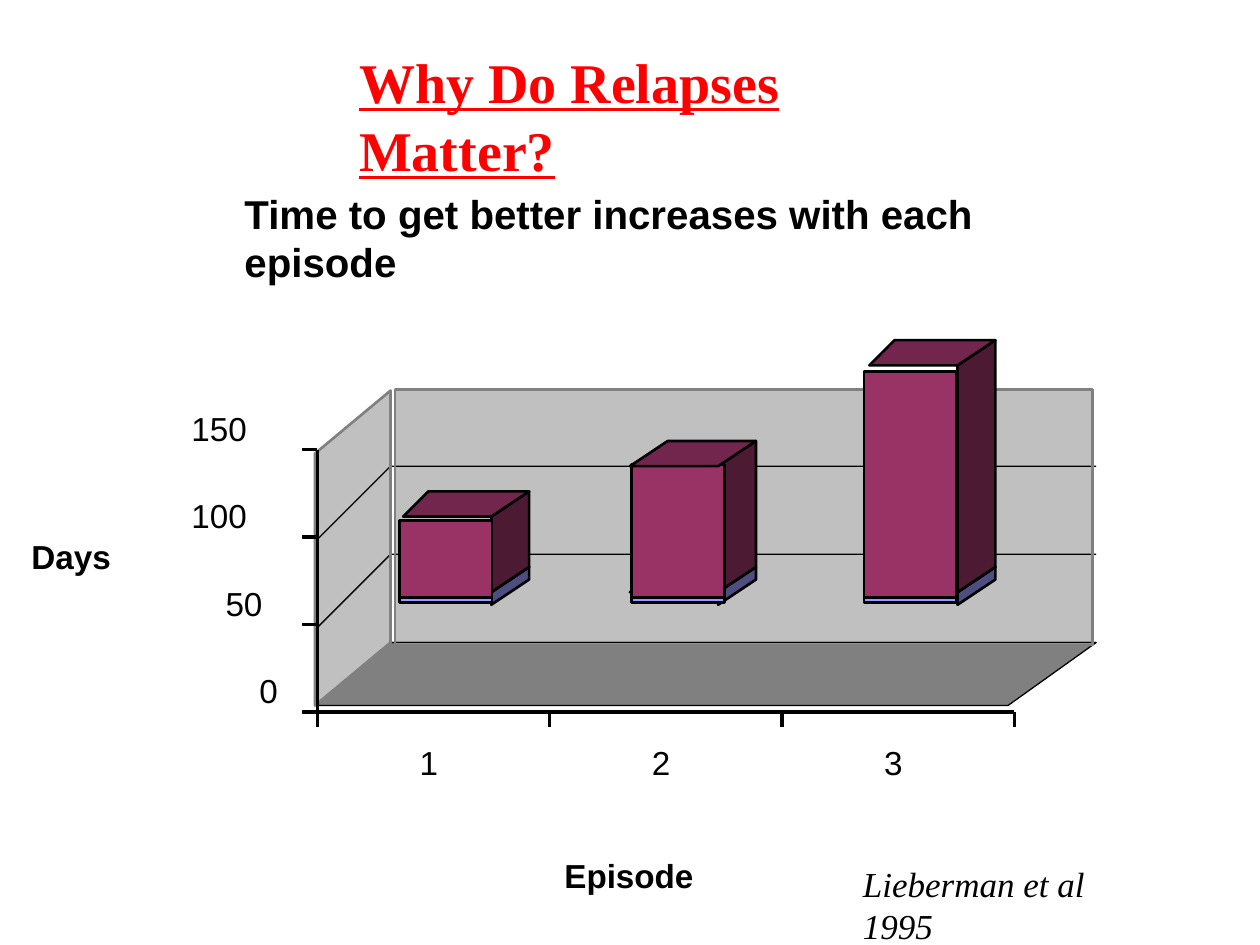
from dataclasses import dataclass

from lxml import etree
from pptx import Presentation
from pptx import util as u
from pptx.dml.color import RGBColor
from pptx.enum import shapes, text
from pptx.oxml.ns import qn

COLUMNS, ROWS = 100, 75
CELL = u.Inches(0.1)

BLACK = RGBColor(0x00, 0x00, 0x00)
RED = RGBColor(0xFF, 0x00, 0x00)
WALL = RGBColor(0xC0, 0xC0, 0xC0)
FLOOR = RGBColor(0x80, 0x80, 0x80)
LILAC = RGBColor(0x99, 0x99, 0xFF)
LILAC_SIDE = RGBColor(0x4D, 0x4D, 0x80)
LILAC_LID = RGBColor(0x73, 0x73, 0xBF)
PLUM = RGBColor(0x99, 0x33, 0x66)
PLUM_SIDE = RGBColor(0x4D, 0x1A, 0x33)
PLUM_LID = RGBColor(0x73, 0x26, 0x4D)

# Lengths are columns and rows of the page grid.
LEFT, RIGHT, BASE, TOP = 25.2, 80.5, 56.5, 35.7
BACK_LEFT, BACK_RIGHT, BACK_BASE, BACK_TOP = 31.35, 86.7, 51.2, 30.9
ROWS_PER_DAY = 6.94 / 50
SLOT = (RIGHT - LEFT) / 3
TICK = 1.2
BAR_LEFT, BAR_BASE, BAR_WIDTH = 31.7, 47.8, 7.35
BAR_DEPTH, BAR_RISE = 2.67, 2.04
HAIRLINE, THICK = 0, 1.5

Point = tuple[float, float]


@dataclass(frozen=True)
class Block:
    left: float
    bottom: float
    height: float
    front: RGBColor
    side: RGBColor
    lid: RGBColor


@dataclass(frozen=True)
class DayMark:
    days: int
    label_left: float


DAY_MARKS = [DayMark(0, 20.6), DayMark(50, 17.9), DayMark(100, 15.2), DayMark(150, 15.2)]
DAYS_BY_EPISODE = {1: 44, 2: 76, 3: 129}


def cells(count: float) -> int:
    return round(count * CELL)


def style(shape, fill: RGBColor | None, line: RGBColor | None, width: float) -> None:
    shape.shadow.inherit = False
    if fill is None:
        shape.fill.background()
    else:
        shape.fill.solid()
        shape.fill.fore_color.rgb = fill
    if line is None:
        shape.line.fill.background()
    else:
        shape.line.color.rgb = line
        shape.line.width = u.Pt(width)


def outline(page, points: list[Point], fill=None, line=None, width=HAIRLINE, close=True) -> None:
    builder = page.shapes.build_freeform(*points[0], scale=CELL)
    builder.add_line_segments(points[1:], close=close)
    style(builder.convert_to_shape(), fill, line, width)


def rectangle(page, left, top, right, bottom, fill=None, line=None, width=HAIRLINE) -> None:
    shape = page.shapes.add_shape(
        shapes.MSO_SHAPE.RECTANGLE,
        cells(left), cells(top), cells(right - left), cells(bottom - top))
    style(shape, fill, line, width)


def rule(page, start: Point, end: Point) -> None:
    line = page.shapes.add_connector(
        shapes.MSO_CONNECTOR.STRAIGHT, *(cells(value) for value in start + end))
    line.line.color.rgb = BLACK
    line.line.width = u.Pt(HAIRLINE)
    etree.SubElement(line._element.spPr, qn("a:effectLst"))


def write(box, words: str, size: float, font="Arial", color=BLACK, wrap=False, inset=0.0,
          **emphasis: bool) -> None:
    frame = box.text_frame
    frame.word_wrap = wrap
    frame.auto_size = text.MSO_AUTO_SIZE.NONE
    frame.vertical_anchor = text.MSO_ANCHOR.TOP
    frame.margin_left = frame.margin_right = cells(inset)
    frame.margin_top = frame.margin_bottom = cells(inset / 2)
    para = frame.paragraphs[0]
    para.alignment = text.PP_ALIGN.LEFT
    span = para.add_run()
    span.text = words
    span.font.name, span.font.size = font, u.Pt(size)
    span.font.color.rgb = color
    for name, value in emphasis.items():
        setattr(span.font, name, value)


def label(page, words: str, left, top, width, height=3.2, size=19, **look) -> None:
    box = page.shapes.add_textbox(cells(left), cells(top), cells(width), cells(height))
    write(box, words, size, **look)


def draw_room(page) -> None:
    """Floor, walls and the lines that run along both walls."""
    floor = [(LEFT, BASE), (BACK_LEFT, BACK_BASE), (BACK_RIGHT, BACK_BASE), (RIGHT, BASE)]
    side = [(LEFT, BASE), (LEFT, TOP), (BACK_LEFT, BACK_TOP), (BACK_LEFT, BACK_BASE)]
    back = (BACK_LEFT, BACK_TOP, BACK_RIGHT, BACK_BASE)
    outline(page, floor, fill=FLOOR)
    outline(page, side, fill=WALL)
    rectangle(page, *back, fill=WALL)
    for mark in DAY_MARKS[:-1]:
        rise = mark.days * ROWS_PER_DAY
        outline(page, [(LEFT, BASE - rise), (BACK_LEFT, BACK_BASE - rise),
                       (BACK_RIGHT, BACK_BASE - rise)], line=BLACK, close=False)
    outline(page, floor, line=BLACK)
    outline(page, side, line=FLOOR, width=THICK)
    rectangle(page, *back, line=FLOOR, width=THICK)


def draw_axes(page) -> None:
    rule(page, (LEFT, BASE), (LEFT, TOP))
    rule(page, (LEFT, BASE), (RIGHT, BASE))
    for mark in DAY_MARKS:
        level = BASE - mark.days * ROWS_PER_DAY
        rule(page, (LEFT, level), (LEFT - TICK, level))
        label(page, str(mark.days), mark.label_left, level - 3.3, 4.4)
    for edge in range(len(DAYS_BY_EPISODE) + 1):
        rule(page, (LEFT + edge * SLOT, BASE), (LEFT + edge * SLOT, BASE + TICK))
    for slot, episode in enumerate(DAYS_BY_EPISODE):
        label(page, str(episode), 33.3 + slot * SLOT, 58.9, 1.5)
    label(page, "Days", 2.5, 42.6, 6.3, bold=True)
    label(page, "Episode", 44.8, 67.9, 10.3, bold=True)


def draw_block(page, block: Block) -> None:
    left, right = block.left, block.left + BAR_WIDTH
    bottom, top = block.bottom, block.bottom - block.height
    edge = {"line": BLACK, "width": THICK}
    far_right = right + BAR_DEPTH
    outline(page, [(right, bottom), (right, top), (far_right, top - BAR_RISE),
                   (far_right, bottom - BAR_RISE)], fill=block.side, **edge)
    rectangle(page, left, top, right, bottom, fill=block.front, **edge)
    outline(page, [(right, top), (far_right, top - BAR_RISE),
                   (left + BAR_DEPTH, top - BAR_RISE), (left, top)], fill=block.lid, **edge)


def draw_bars(page) -> None:
    foot = 0.4
    for slot, days in enumerate(DAYS_BY_EPISODE.values()):
        left = BAR_LEFT + slot * SLOT
        draw_block(page, Block(left, BAR_BASE, foot, LILAC, LILAC_SIDE, LILAC_LID))
        draw_block(page, Block(left, BAR_BASE - foot, days * ROWS_PER_DAY,
                               PLUM, PLUM_SIDE, PLUM_LID))


def main() -> None:
    deck = Presentation()
    deck.slide_width, deck.slide_height = cells(COLUMNS), cells(ROWS)
    page = deck.slides.add_slide(deck.slide_layouts[5])
    title = page.shapes.title
    title.left, title.top, title.width, title.height = map(cells, (27.5, 3.3, 52, 6.3))
    write(title, "Why Do Relapses Matter?", 32, font="Times New Roman", color=RED,
          inset=1, bold=True, underline=True)
    draw_room(page)
    draw_axes(page)
    label(page, "Time to get better increases with each episode", 19.4, 15, 69, 7.6,
          size=23, wrap=True, bold=True)
    draw_bars(page)
    label(page, "Lieberman et al 1995", 67.5, 68, 24, 7, size=20, font="Times New Roman",
          wrap=True, inset=1, italic=True)
    deck.save("out.pptx")


if __name__ == "__main__":
    main()
